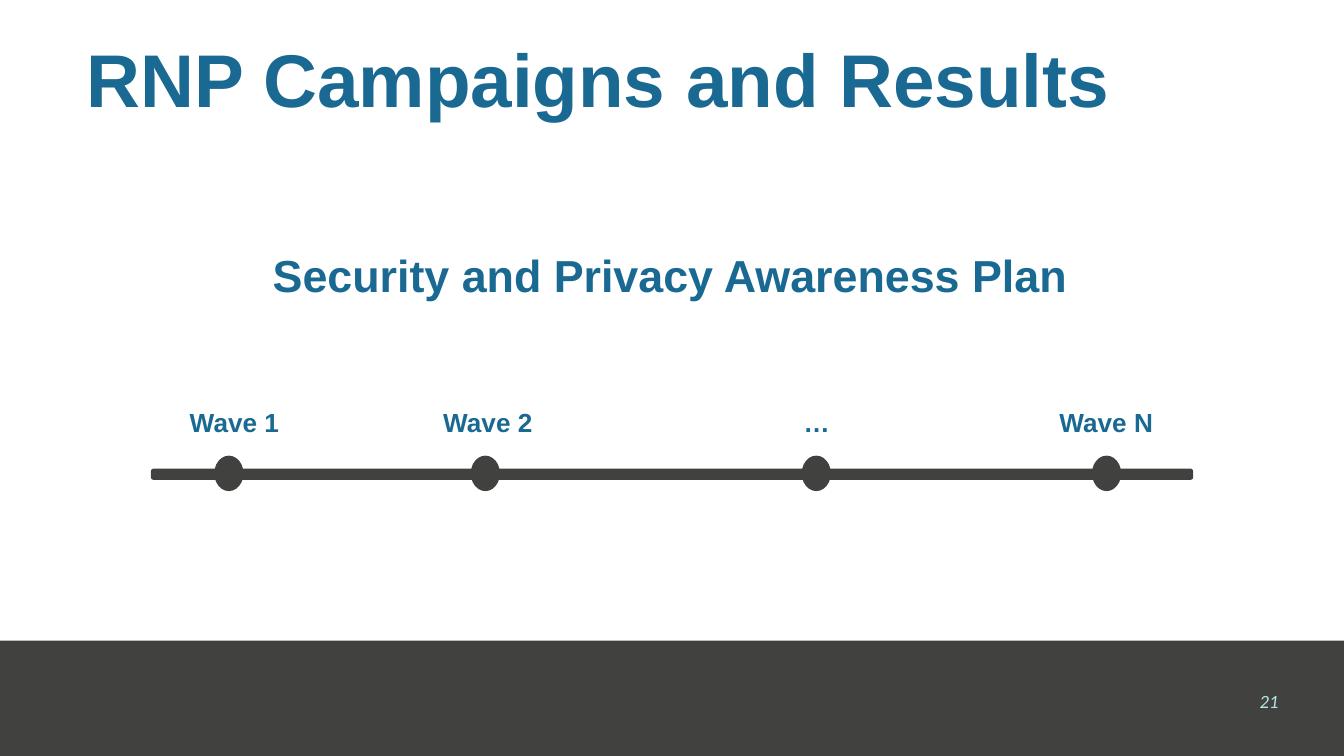
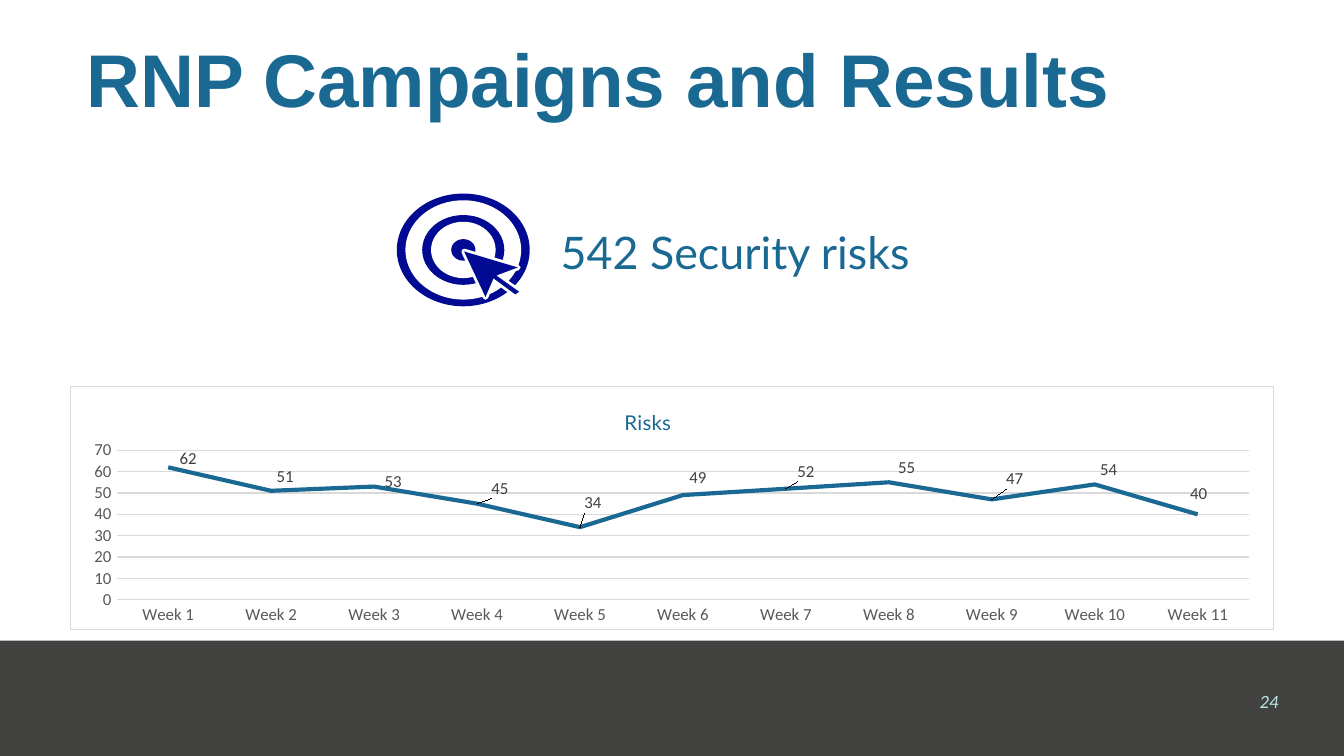
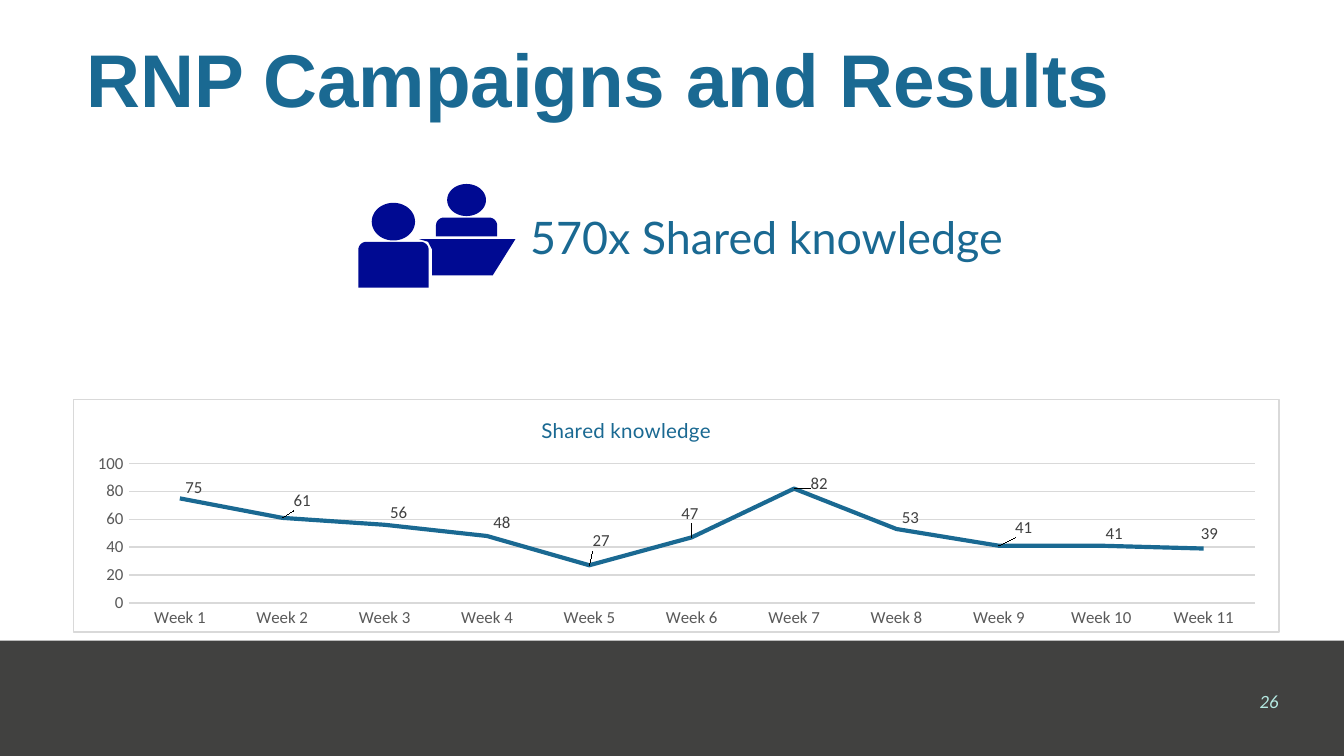
from math import cos, pi, sin

from pptx import Presentation
from pptx.chart.data import CategoryChartData
from pptx.dml.color import RGBColor
from pptx.enum.chart import XL_CHART_TYPE, XL_LABEL_POSITION, XL_MARKER_STYLE, XL_TICK_MARK
from pptx.enum.shapes import MSO_SHAPE
from pptx.enum.text import MSO_ANCHOR, PP_ALIGN
from pptx.oxml import parse_xml
from pptx.oxml.ns import nsdecls, qn
from pptx.util import Pt

RECTANGLE, ELLIPSE, ROUNDED = MSO_SHAPE.RECTANGLE, MSO_SHAPE.OVAL, MSO_SHAPE.ROUNDED_RECTANGLE
TOP, MIDDLE = MSO_ANCHOR.TOP, MSO_ANCHOR.MIDDLE
LEFT, CENTER, RIGHT = PP_ALIGN.LEFT, PP_ALIGN.CENTER, PP_ALIGN.RIGHT
LINE_CHART = XL_CHART_TYPE.LINE
NO_MARKER, NO_TICK = XL_MARKER_STYLE.NONE, XL_TICK_MARK.NONE
ABOVE = XL_LABEL_POSITION.ABOVE

COLORS = {
    "blue": "1A6992",
    "dark": "414140",
    "navy": "000A92",
    "white": "FFFFFF",
    "mint": "B4E9E2",
    "grid": "D9D9D9",
    "axis": "595959",
    "label": "404040",
    "black": "000000",
}
TITLE = "RNP Campaigns and Results"
WEEKS = [f"Week {number}" for number in range(1, 12)]


def rgb(color):
    return RGBColor.from_string(COLORS[color])


def set_font(font, name, size, color, bold=False, italic=False):
    font.name, font.size = name, Pt(size)
    font.bold, font.italic = bold, italic
    font.color.rgb = rgb(color)


def paint(shape, color, outline=0):
    """Fill a shape; an outline width adds a line of the same colour."""
    shape.shadow.inherit = False
    shape.fill.solid()
    shape.fill.fore_color.rgb = rgb(color)
    if outline:
        shape.line.color.rgb = rgb(color)
        shape.line.width = Pt(outline)
    else:
        shape.line.fill.background()


def add_preset(shapes, kind, box, color, outline=0):
    shape = shapes.add_shape(kind, *map(Pt, box))
    paint(shape, color, outline)


def add_outline(shapes, origin, contours, color, outline=0):
    """Add one freeform made of closed contours, given relative to the origin."""
    left, top = origin
    contours = [[(Pt(left + x), Pt(top + y)) for x, y in contour] for contour in contours]
    builder = shapes.build_freeform(*contours[0][0])
    for index, corners in enumerate(contours):
        if index:
            builder.move_to(*corners[0])
        builder.add_line_segments(corners[1:], close=True)
    paint(builder.convert_to_shape(), color, outline)


def arc_points(center_x, center_y, radius_x, radius_y, start=0, end=2 * pi, steps=48):
    angles = [start + (end - start) * step / steps for step in range(steps + 1)]
    return [(center_x + radius_x * cos(angle), center_y + radius_y * sin(angle))
            for angle in angles]


def body_points(left, top, width, height, radius=4.3):
    """Outline of a box with rounded upper corners."""
    right, bottom, middle = left + width, top + height, top + radius
    return [(left, bottom),
            *arc_points(left + radius, middle, radius, radius, pi, 1.5 * pi, 8),
            *arc_points(right - radius, middle, radius, radius, 1.5 * pi, 2 * pi, 8),
            (right, bottom)]


def add_text(slide, box, text, name, size, color, bold=False, italic=False,
             align=LEFT, anchor=TOP):
    frame = slide.shapes.add_textbox(*map(Pt, box)).text_frame
    frame.word_wrap = True
    frame.vertical_anchor = anchor
    paragraph = frame.paragraphs[0]
    paragraph.text = text
    paragraph.alignment = align
    set_font(paragraph.font, name, size, color, bold, italic)
    return paragraph


def add_base_slide(presentation, number):
    """Add a slide with the footer band, page number and title."""
    slide = presentation.slides.add_slide(presentation.slide_layouts[6])
    add_preset(slide.shapes, RECTANGLE, (0, 343.2, 720, 61.8), "dark")
    add_text(slide, (530, 365, 162, 21.6), str(number), "Calibri", 10, "mint",
             italic=True, align=RIGHT, anchor=MIDDLE)
    title = add_text(slide, (39.4, 17.3, 664.5, 54.7), TITLE, "Arial", 40, "blue",
                     bold=True, anchor=MIDDLE)
    title.line_spacing = 0.9
    return slide


def add_timeline(slide, box, waves):
    """Draw the bar with its dots; each wave is (label, dot centre, label centre)."""
    left, top, width, height = box
    bar_height, dot_width, dot_height, label_width = 5, 14.6, 18, 80
    bar_top = top + height - (dot_height + bar_height) / 2 + 0.5
    add_preset(slide.shapes, ROUNDED, (left, bar_top, width, bar_height), "dark", 1)
    for label, dot_center, label_center in waves:
        add_preset(slide.shapes, ELLIPSE,
                   (left + dot_center - dot_width / 2, top + height - dot_height,
                    dot_width, dot_height), "dark", 1)
        add_text(slide, (left + label_center - label_width / 2, top, label_width, 24.5),
                 label, "Arial", 14, "blue", bold=True, align=CENTER)


def draw_target_icon(slide, origin):
    shapes = slide.shapes.add_group_shape().shapes
    left, top = origin
    center_x, center_y = left + 35.6, top + 30.2
    rings = [(35.6, 30.2), (31, 26.6), (22, 18.7), (17.3, 15.1), (6.5, 5.8)]
    for index, (radius_x, radius_y) in enumerate(rings):
        add_preset(shapes, ELLIPSE,
                   (center_x - radius_x, center_y - radius_y, 2 * radius_x, 2 * radius_y),
                   "white" if index % 2 else "navy")
    pointer = [(36, 31), (64.8, 39.6), (53.3, 43.9), (65.5, 52.6),
               (63.4, 54), (51.8, 45.4), (47.5, 55.4)]
    for color, outline in (("white", 3), ("navy", 0)):
        add_outline(shapes, origin, [pointer], color, outline)


def draw_desk_icon(slide, origin):
    front_body = body_points(0, 31, 37.7, 24.5)
    desk = [(32.4, 29.5), (84.2, 29.5), (72, 49), (39.6, 49), (39.6, 35.3), (37.4, 31)]
    back_body = body_points(41.6, 18, 32.8, 10.1)
    front_head = arc_points(18.8, 20.2, 11.6, 10.1)
    back_head = arc_points(58, 8.6, 10.4, 8.6)
    add_outline(slide.shapes, origin,
                [front_body, desk, back_body, front_head, back_head], "navy")


def set_layout(parent, index, **values):
    """Place a chart part by hand, as shares of the chart's size."""
    for old in parent.findall(qn("c:layout")):
        parent.remove(old)
    settings = "".join(f'<c:{key} val="{value}"/>' for key, value in values.items())
    parent.insert(index, parse_xml(
        f'<c:layout {nsdecls("c")}><c:manualLayout>{settings}</c:manualLayout></c:layout>'))


def style_axis(axis):
    axis.major_tick_mark = axis.minor_tick_mark = NO_TICK
    set_font(axis.tick_labels.font, "Calibri", 9, "axis")


def style_line(line, color, width):
    line.color.rgb = rgb(color)
    line.width = Pt(width)


def add_weekly_chart(slide, box, title, values, maximum, step, title_at, plot_box,
                     label_shifts):
    """Add a line chart; title, plot and label shifts are points inside its box."""
    data = CategoryChartData()
    data.categories = WEEKS
    data.add_series("Series 1", values)
    chart = slide.shapes.add_chart(LINE_CHART, *map(Pt, box), data).chart
    set_font(chart.font, "Calibri", 10, "black")
    chart.has_legend = False
    chart.has_title = True
    heading = chart.chart_title.text_frame.paragraphs[0]
    heading.text = title
    set_font(heading.font, "Lato", 11, "blue")

    category_axis, value_axis = chart.category_axis, chart.value_axis
    style_axis(category_axis)
    style_axis(value_axis)
    style_line(category_axis.format.line, "grid", 0.75)
    value_axis.format.line.fill.background()
    value_axis.minimum_scale, value_axis.maximum_scale = 0, maximum
    value_axis.major_unit = step
    value_axis.has_major_gridlines = True
    style_line(value_axis.major_gridlines.format.line, "grid", 0.75)

    chart.plots[0].vary_by_categories = False
    series = chart.plots[0].series[0]
    series.smooth = False
    series.marker.style = NO_MARKER
    style_line(series.format.line, "blue", 2.25)
    for index in range(len(values)):
        label = series.points[index].data_label
        set_font(label.font, "Calibri", 9, "label")
        label.position = ABOVE

    root = chart.element
    width, height = box[2:]
    for label, (shift_x, shift_y) in zip(root.iter(qn("c:dLbl")), label_shifts):
        set_layout(label, 1, x=shift_x / width, y=shift_y / height)
    set_layout(root.find(".//" + qn("c:title")), 1, xMode="edge", yMode="edge",
               x=title_at[0] / width, y=title_at[1] / height)
    plot_left, plot_top, plot_width, plot_height = plot_box
    set_layout(root.find(".//" + qn("c:plotArea")), 0, layoutTarget="inner",
               xMode="edge", yMode="edge", x=plot_left / width, y=plot_top / height,
               w=plot_width / width, h=plot_height / height)
    root.find(qn("c:chart")).addnext(parse_xml(
        f'<c:spPr {nsdecls("c", "a")}>'
        f'<a:solidFill><a:srgbClr val="{COLORS["white"]}"/></a:solidFill>'
        f'<a:ln w="{Pt(0.75)}"><a:solidFill><a:srgbClr val="{COLORS["grid"]}"/>'
        '</a:solidFill></a:ln></c:spPr>'))


def add_plan_slide(presentation, number):
    slide = add_base_slide(presentation, number)
    add_text(slide, (139, 129, 444.2, 36), "Security and Privacy Awareness Plan",
             "Arial", 24, "blue", bold=True)
    waves = [("Wave 1", 41.2, 44.2), ("Wave 2", 178.6, 180),
             ("…", 355.9, 356.2), ("Wave N", 511.4, 511.2)]
    add_timeline(slide, (81.4, 214, 557.3, 48.6), waves)


def add_result_slide(presentation, number, draw_icon, icon_origin, headline,
                     headline_box, **chart):
    slide = add_base_slide(presentation, number)
    add_text(slide, headline_box, headline, "Lato", 24, "blue", anchor=MIDDLE)
    draw_icon(slide, icon_origin)
    add_weekly_chart(slide, **chart)


def main():
    presentation = Presentation()
    presentation.slide_width, presentation.slide_height = Pt(720), Pt(405)
    add_plan_slide(presentation, 21)
    add_result_slide(
        presentation, 24, draw_target_icon, (212.6, 103.7),
        "542 Security risks", (293.3, 117, 251.3, 36),
        box=(37.5, 206.8, 645, 131), title="Risks",
        values=[62, 51, 53, 45, 34, 49, 52, 55, 47, 54, 40], maximum=70, step=10,
        title_at=(295, 8.8), plot_box=(24.7, 34.3, 607.4, 80.6),
        label_shifts=[(10.7, 3.8), (7.5, 0.5), (10.2, 5.4), (12.3, 0), (7, -4.8), (8, -1),
                      (10.7, -1), (9.6, 0.5), (12.3, -2.7), (7.5, 0.5), (0.5, -3.2)])
    add_result_slide(
        presentation, 26, draw_desk_icon, (192, 98.6),
        "570x Shared knowledge", (277, 108.7, 341.3, 36),
        box=(39, 213.8, 646.5, 125.3), title="Shared knowledge",
        values=[75, 61, 56, 48, 27, 47, 82, 53, 41, 41, 39], maximum=100, step=20,
        title_at=(248.9, 6.5), plot_box=(29.6, 34.4, 604, 75.2),
        label_shifts=[(7.5, 2.4), (10.7, -1), (7.5, 1.9), (8, 1), (6.4, -4.8), (-1, -4.8),
                      (13.4, 5.4), (7.5, 2.1), (13.4, -1.6), (7, 1.6), (3.2, 0)])
    presentation.save("out.pptx")


if __name__ == "__main__":
    main()
